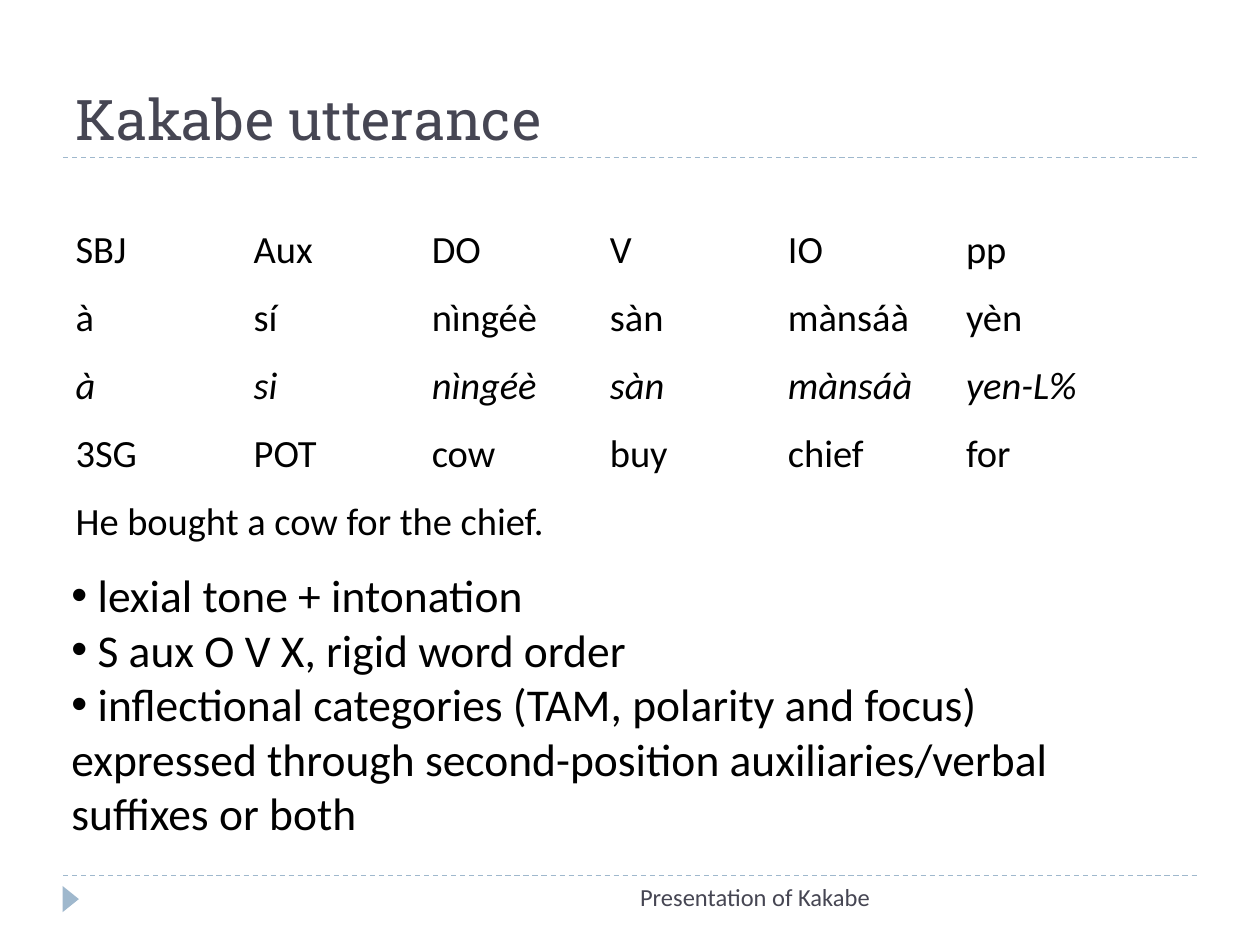
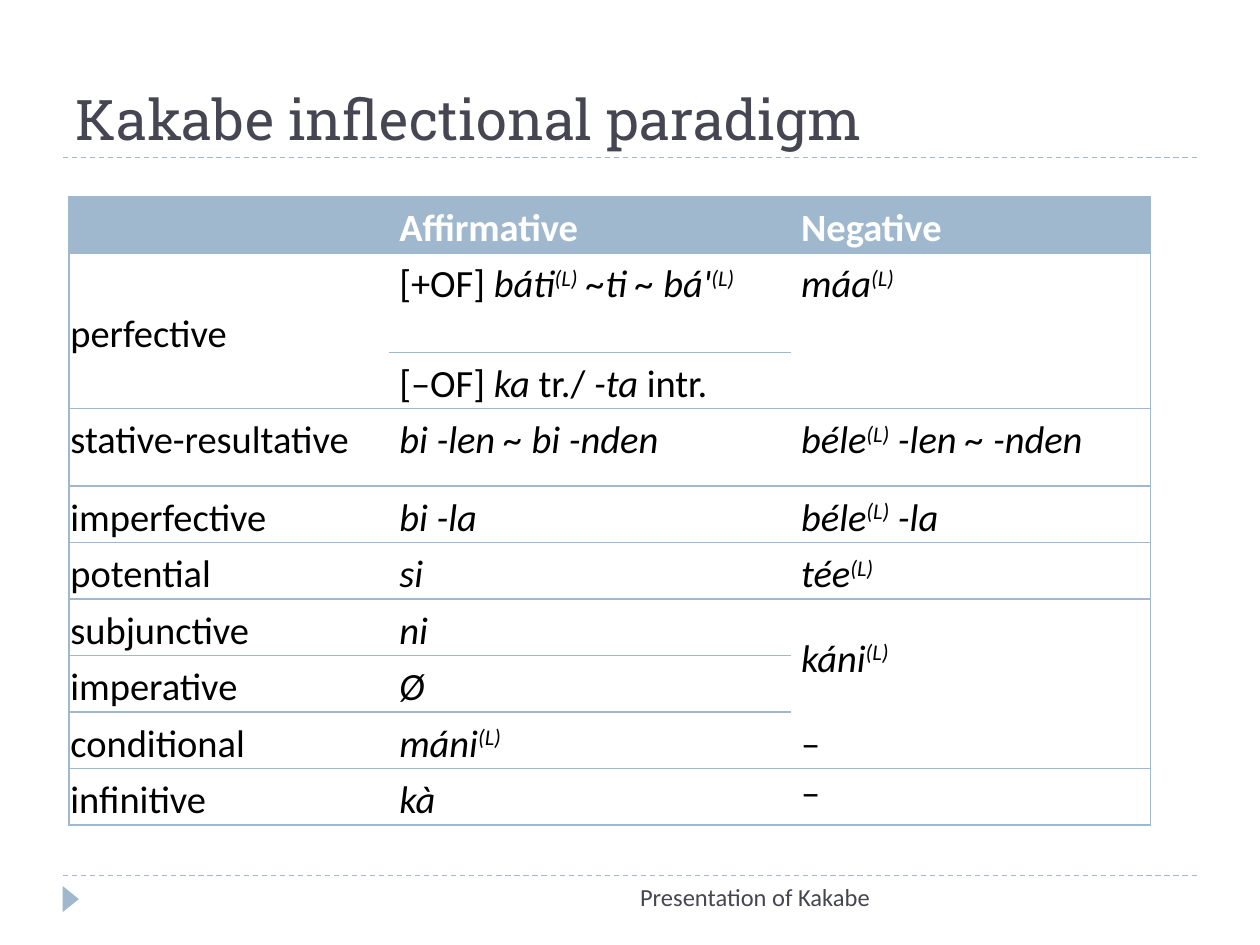
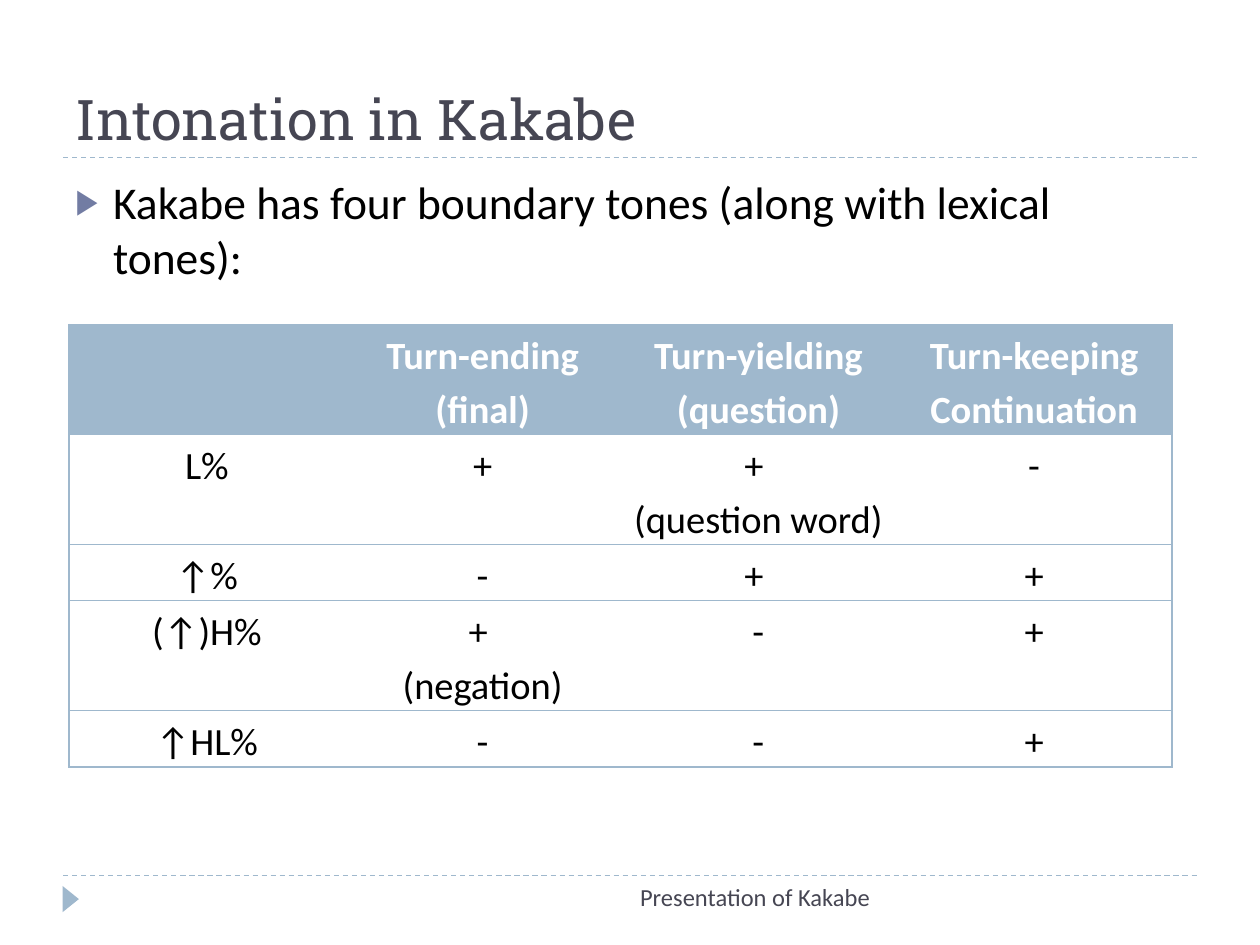
from lxml import etree
from pptx import Presentation
from pptx.dml.color import RGBColor
from pptx.enum.dml import MSO_LINE_DASH_STYLE as Dash
from pptx.enum.shapes import MSO_CONNECTOR as Connector, MSO_SHAPE as Shape
from pptx.enum.text import MSO_ANCHOR as Anchor, PP_ALIGN as Align
from pptx.oxml.ns import qn
from pptx.util import Cm, Pt

BLUE = RGBColor(0x9F, 0xB8, 0xCD)
BULLET = RGBColor(0x72, 0x7C, 0xA3)
DARK = RGBColor(0x46, 0x46, 0x53)
BLACK = RGBColor(0, 0, 0)
WHITE = RGBColor(0xFF, 0xFF, 0xFF)
BODY_FONT, TITLE_FONT = "Calibri", "Roboto Slab"
LEFT, WIDTH = 1.27, 22.86
TITLE_RULE, FOOTER_RULE = 3.18, 17.65
CELL_INSET, CELL_INDENT = 0.03, 0.21

# Tones are written as combining marks after the vowel.
LOW, HIGH = "̀", "́"
TONED_VOWELS = {"à": "a" + LOW, "è": "e" + LOW, "ì": "i" + LOW,
                "á": "a" + HIGH, "é": "e" + HIGH, "í": "i" + HIGH}

GLOSS_ROWS = [
    ["SBJ", "Aux", "DO", "V", "IO", "pp"],
    ["à", "sí", "nìngéè", "sàn", "mànsáà", "yèn"],
    ["_à_", "_si_", "_nìngéè_", "_sàn_", "_mànsáà_", "_yen-L%_"],
    ["3SG", "POT", "cow", "buy", "chief", "for"],
    ["He bought a cow for the chief.", "", "", "", "", ""],
]
GRAMMAR_POINTS = [
    " lexial tone + intonation",
    " S aux O V X, rigid word order",
    " inflectional categories (TAM, polarity and focus) expressed through "
    "second-position auxiliaries/verbal suffixes or both",
]
PARADIGM_ROWS = [
    ["", "Affirmative", "Negative"],
    ["perfective", "[+OF] _báti^(L)^ ~ti ~ bá'^(L)^_", "_máa^(L)^_"],
    ["", "[–OF] _ka_ tr./ _-ta _intr.", ""],
    ["stative-resultative", "_bi -len ~ bi -nden _", "_béle^(L)^ -len ~ -nden_"],
    ["imperfective", "_bi -la_", "_béle^(L)^ -la_"],
    ["potential", "_si_", "_tée^(L)^_"],
    ["subjunctive", "_ni_", "_káni^(L)^_"],
    ["imperative", "_Ø_", ""],
    ["conditional", "_máni^(L)^_", "–"],
    ["infinitive", "_kà_", "–"],
]
TONE_ROWS = [
    ["", "Turn-ending\n(final)", "Turn-yielding\n(question)", "Turn-keeping\nContinuation"],
    ["L%", "+", "+ \n(question word)", "-"],
    ["↑%", "-", "+ ", "+"],
    ["(↑)H%", "+ \n(negation)", "-", "+"],
    ["↑HL%", "-", "-", "+"],
]


def add_runs(p, text, size, color=BLACK, font=BODY_FONT, bold=False):
    """Add text to p; _ switches italics and ^ switches superscript."""
    for vowel, marked in TONED_VOWELS.items():
        text = text.replace(vowel, marked)
    for i, part in enumerate(text.split("_")):
        for j, piece in enumerate(part.split("^")):
            if not piece:
                continue
            r = p.add_run()
            r.text = piece
            r.font.name, r.font.size = font, Pt(size)
            r.font.bold, r.font.italic = bold, i % 2 == 1
            r.font.color.rgb = color
            if j % 2:
                r.font._element.set("baseline", "30000")


def add_textbox(s, x, y, w, h):
    tf = s.shapes.add_textbox(Cm(x), Cm(y), Cm(w), Cm(h)).text_frame
    tf.word_wrap = True
    return tf


def add_bullet(p, char, color=None, size=None, hang=0):
    pPr = p._p.get_or_add_pPr()
    pPr.set("marL", str(Cm(hang)))
    pPr.set("indent", str(-Cm(hang)))
    if color is not None:
        clr = etree.SubElement(pPr, qn("a:buClr"))
        etree.SubElement(clr, qn("a:srgbClr"), val=str(color))
    if size:
        etree.SubElement(pPr, qn("a:buSzPct"), val=str(size * 1000))
    etree.SubElement(pPr, qn("a:buFont"), typeface="Arial")
    etree.SubElement(pPr, qn("a:buChar"), char=char)


def add_dashed_rule(s, y):
    line = s.shapes.add_connector(Connector.STRAIGHT, Cm(LEFT), Cm(y), Cm(LEFT + WIDTH), Cm(y))
    line.line.color.rgb, line.line.width = BLUE, Pt(0.75)
    line.line.dash_style = Dash.DASH
    etree.SubElement(line._element.spPr, qn("a:effectLst"))


def add_titled_slide(prs, title):
    """Add a slide with the title, both rules, the marker and the footer."""
    s = prs.slides.add_slide(prs.slide_layouts[6])
    add_dashed_rule(s, FOOTER_RULE)
    add_dashed_rule(s, TITLE_RULE)
    marker = s.shapes.add_shape(Shape.ISOSCELES_TRIANGLE, Cm(1.16), Cm(17.96), Cm(0.53), Cm(0.33))
    marker.rotation = 90
    marker.shadow.inherit = False
    marker.fill.solid()
    marker.fill.fore_color.rgb = BLUE
    marker.line.fill.background()

    tf = add_textbox(s, LEFT, 0.44, WIDTH, 2.75)
    tf.vertical_anchor = Anchor.BOTTOM
    add_runs(tf.paragraphs[0], title, 32, DARK, TITLE_FONT)

    p = add_textbox(s, 8.06, FOOTER_RULE, 9.73, 1.02).paragraphs[0]
    p.alignment = Align.RIGHT
    add_runs(p, "Presentation of Kakabe", 14, DARK)
    return s


def set_borders(cell, sides):
    """Draw the named sides (any of L, R, T, B) and clear the others."""
    tcPr = cell._tc.get_or_add_tcPr()
    for i, side in enumerate("LRTB"):
        ln = etree.Element(qn(f"a:ln{side}"), w=str(Pt(0.75)))
        if side in sides:
            fill = etree.SubElement(ln, qn("a:solidFill"))
            etree.SubElement(fill, qn("a:srgbClr"), val=str(BLUE))
        else:
            etree.SubElement(ln, qn("a:noFill"))
        tcPr.insert(i, ln)


def add_plain_table(s, x, y, widths, heights):
    shape = s.shapes.add_table(len(heights), len(widths), Cm(x), Cm(y),
                               Cm(sum(widths)), Cm(sum(heights)))
    table = shape.table
    table.first_row = table.horz_banding = False
    for col, w in zip(table.columns, widths):
        col.width = Cm(w)
    for row, h in zip(table.rows, heights):
        row.height = Cm(h)
    for cell in table.iter_cells():
        cell.fill.background()
    return table


def fill_cell(cell, text, align=Align.LEFT, spacing=None, **style):
    tf = cell.text_frame
    for i, line in enumerate(text.split("\n")):
        p = tf.add_paragraph() if i else tf.paragraphs[0]
        p.alignment = align
        if spacing:
            p.line_spacing = spacing
        add_runs(p, line, 22, **style)


def add_ruled_table(s, y, widths, heights, rows, align, indent, open_tops=()):
    """Table with a blue header and row rules, none above the open_tops cells."""
    table = add_plain_table(s, 1.39, y, widths, heights)
    last = len(widths) - 1
    for i, row in enumerate(rows):
        for j, text in enumerate(row):
            cell = table.cell(i, j)
            cell.margin_left = Cm(indent if j else CELL_INSET)
            cell.margin_right = cell.margin_top = cell.margin_bottom = Cm(CELL_INSET)
            header = i == 0
            if header:
                cell.fill.solid()
                cell.fill.fore_color.rgb = BLUE
            fill_cell(cell, text, align, 1.15, bold=header, color=WHITE if header else BLACK)
            sides = ("L" if j == 0 else "") + ("R" if j == last else "")
            sides += "" if (i, j) in open_tops else "T"
            sides += "" if (i + 1, j) in open_tops else "B"
            set_borders(cell, sides)
    return table


def build_utterance(prs):
    s = add_titled_slide(prs, "Kakabe utterance")
    table = add_plain_table(s, LEFT, 4.45, [3.59] * 6, [1.37] * 5)
    for i, row in enumerate(GLOSS_ROWS):
        for j, text in enumerate(row):
            fill_cell(table.cell(i, j), text)
            set_borders(table.cell(i, j), "")
    table.cell(4, 0).merge(table.cell(4, 5))

    tf = add_textbox(s, 1.19, 11.31, 21.44, 5.82)
    for i, point in enumerate(GRAMMAR_POINTS):
        p = tf.add_paragraph() if i else tf.paragraphs[0]
        add_bullet(p, "•")
        add_runs(p, point, 26)


def build_paradigm(prs):
    s = add_titled_slide(prs, "Kakabe inflectional paradigm")
    heights = [1.14, 2, 1.14, 1.56] + [1.14] * 6
    table = add_ruled_table(s, 3.96, [6.45, 8.1, 7.26], heights, PARADIGM_ROWS,
                            Align.JUSTIFY, CELL_INDENT,
                            open_tops={(2, 0), (2, 2), (7, 2), (8, 2)})
    for top, col in [(1, 0), (1, 2), (6, 2)]:
        table.cell(top, col).merge(table.cell(top + 1, col))
    for row, col in [(1, 0), (6, 2)]:
        table.cell(row, col).vertical_anchor = Anchor.MIDDLE
    table.cell(9, 2).text_frame.paragraphs[0].line_spacing = 1.0


def build_intonation(prs):
    s = add_titled_slide(prs, "Intonation in Kakabe")
    p = add_textbox(s, LEFT, 3.39, WIDTH, 13.72).paragraphs[0]
    p.space_before = Pt(6)
    add_bullet(p, "▶", BULLET, 76, hang=0.76)
    add_runs(p, "Kakabe has four boundary tones (along with lexical tones):", 26)
    add_ruled_table(s, 6.54, [5.56] * 4, [2.22, 2.22, 1.13, 2.22, 1.13], TONE_ROWS,
                    Align.CENTER, CELL_INSET)


def main():
    prs = Presentation()
    prs.slide_width, prs.slide_height = Cm(25.4), Cm(19.05)
    build_utterance(prs)
    build_paradigm(prs)
    build_intonation(prs)
    prs.save("out.pptx")


if __name__ == "__main__":
    main()
